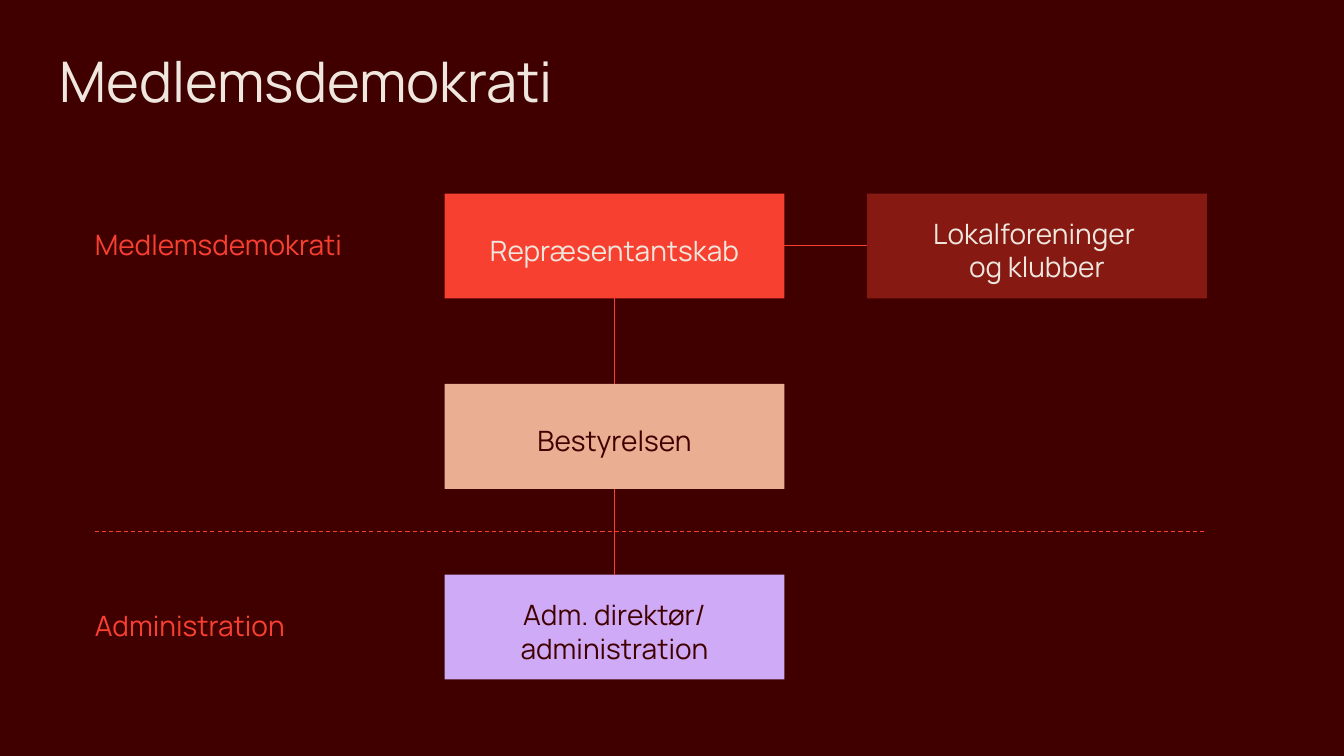
from lxml.etree import SubElement
from pptx import Presentation
from pptx.dml.color import RGBColor
from pptx.enum.dml import MSO_LINE
from pptx.enum.shapes import MSO_CONNECTOR, MSO_SHAPE
from pptx.enum.text import MSO_ANCHOR, MSO_AUTO_SIZE, PP_ALIGN
from pptx.oxml.ns import qn
from pptx.util import Inches, Pt

TITLE = "Medlemsdemokrati"
LABELS = [("Medlemsdemokrati", 0), ("Administration", 2)]
BOXES = {
    "council": ("Repræsentantskab", 0, 0, "red", "cream"),
    "board": ("Bestyrelsen", 0, 1, "peach", "dark"),
    "admin": ("Adm. direktør/\vadministration", 0, 2, "lilac", "dark"),
    "clubs": ("Lokalforeninger \nog klubber", 1, 0, "brick", "cream"),
}
BOTTOM, LEFT, TOP, RIGHT = 2, 1, 0, 3
LINKS = [
    ("council", BOTTOM, "board", TOP),
    ("board", BOTTOM, "admin", TOP),
    ("council", RIGHT, "clubs", LEFT),
]

THEME = {
    "font": "Manrope",
    "title": Pt(40),
    "text": Pt(20),
    "line": Pt(0.75),
    "dark": RGBColor.from_string("400000"),
    "cream": RGBColor.from_string("EFE6DD"),
    "red": RGBColor.from_string("F74030"),
    "peach": RGBColor.from_string("EAAE93"),
    "lilac": RGBColor.from_string("CFAAF6"),
    "brick": RGBColor.from_string("861912"),
}

EDGE = 0.94
COLS, FIRST, STEP = (4.41, 8.6), 1.92, 1.89
WIDE, HIGH = 3.37, 1.04
LABEL_W, LABEL_H = 3.07, 0.36
SIDES = ("margin_left", "margin_top", "margin_right", "margin_bottom")


def apply(item, values):
    for name, value in values.items():
        setattr(item, name, value)


def place(*spots):
    return [Inches(spot) for spot in spots]


def write(shape, text, size, color, pads=(0, 0, 0, 0), anchor=MSO_ANCHOR.TOP,
          align=PP_ALIGN.LEFT, spacing=1.0):
    frame = shape.text_frame
    apply(frame, {"text": text, "word_wrap": True, "vertical_anchor": anchor,
                  "auto_size": MSO_AUTO_SIZE.NONE})
    apply(frame, dict(zip(SIDES, place(*pads))))
    for para in frame.paragraphs:
        apply(para, {"alignment": align, "line_spacing": spacing})
        look = {"name": THEME["font"], "size": THEME[size], "bold": False}
        for run in para.runs:
            apply(run.font, look)
            run.font.color.rgb = THEME[color]


def rule(shapes, start, end):
    line = shapes.add_connector(MSO_CONNECTOR.STRAIGHT, *start, *end)
    line.line.color.rgb = THEME["red"]
    line.line.width = THEME["line"]
    SubElement(line._element.spPr, qn("a:effectLst"))
    return line


def row_top(row):
    return FIRST + row * STEP


def main():
    deck = Presentation()
    apply(deck, {"slide_width": Inches(13.33), "slide_height": Inches(7.5)})
    slide = deck.slides.add_slide(deck.slide_layouts[5])
    slide.background.fill.solid()
    slide.background.fill.fore_color.rgb = THEME["dark"]
    shapes = slide.shapes

    title = shapes.title
    names = ("left", "top", "width", "height")
    apply(title, dict(zip(names, place(0.59, 0.51, 10.84, 1.89))))
    write(title, TITLE, "title", "cream", spacing=0.95)

    made = {}
    for key, (text, col, row, fill, color) in BOXES.items():
        box = shapes.add_shape(
            MSO_SHAPE.RECTANGLE, *place(COLS[col], row_top(row), WIDE, HIGH))
        box.shadow.inherit = False
        box.fill.solid()
        box.fill.fore_color.rgb = THEME[fill]
        box.line.fill.background()
        write(box, text, "text", color, (0.12, 0.12, 0.12, 0.04),
              MSO_ANCHOR.MIDDLE, PP_ALIGN.CENTER)
        made[key] = box

    for text, row in LABELS:
        top = row_top(row) + (HIGH - LABEL_H) / 2
        label = shapes.add_textbox(*place(EDGE, top, LABEL_W, LABEL_H))
        write(label, text, "text", "red")

    for source, out, target, into in LINKS:
        link = rule(shapes, (0, 0), (0, 0))
        link.begin_connect(made[source], out)
        link.end_connect(made[target], into)

    level = row_top(2) - (STEP - HIGH) / 2
    split = rule(shapes, place(EDGE, level), place(COLS[1] + WIDE, level))
    split.line.dash_style = MSO_LINE.DASH

    deck.save("out.pptx")


if __name__ == "__main__":
    main()
